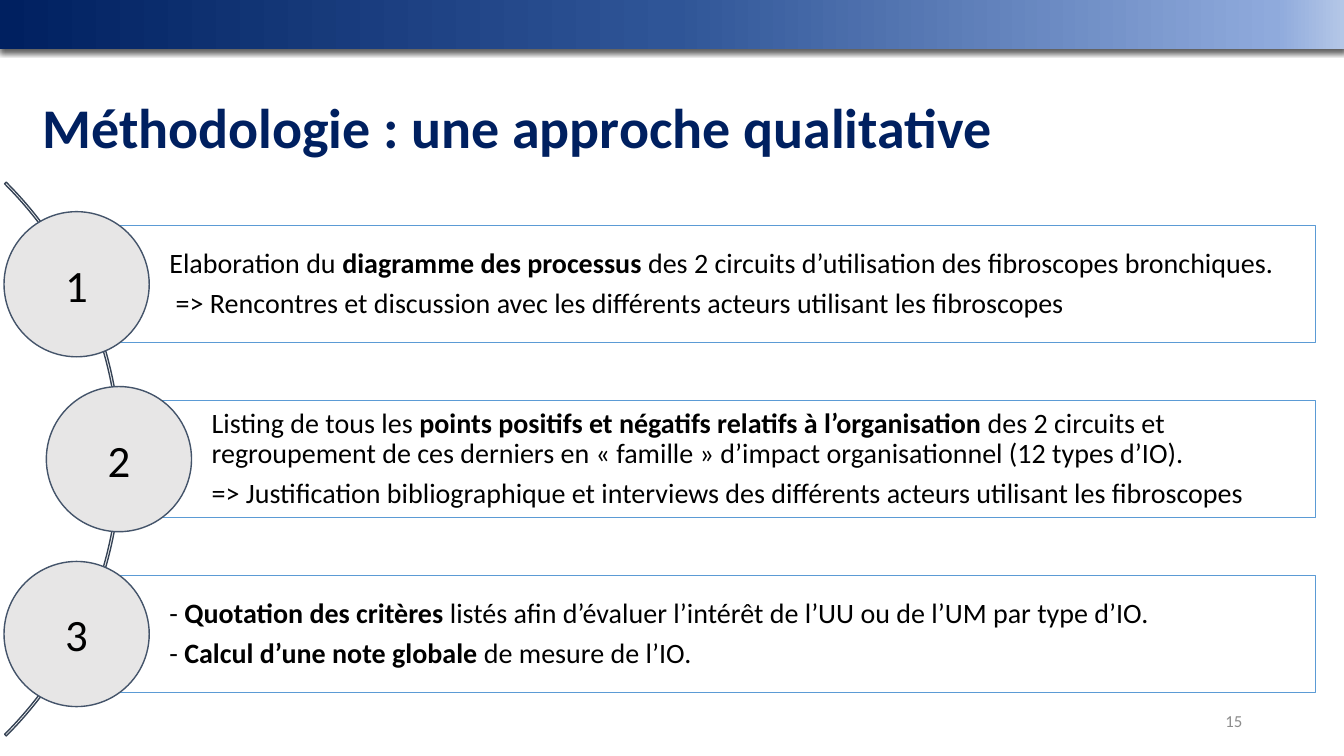
from collections import namedtuple

from lxml import etree
from pptx import Presentation
from pptx.dml.color import RGBColor as Rgb
from pptx.enum.shapes import MSO_SHAPE as Kind
from pptx.enum.text import MSO_ANCHOR as Anchor, MSO_AUTO_SIZE as Auto, PP_ALIGN as Align
from pptx.util import Inches, Pt

Theme = namedtuple("Theme", "font navy ink grey disc rim edge arc white ramp title number body small")
theme = Theme(
    font="Calibri", navy="002060", ink="000000", grey="8C8C8C", disc="E7E6E6",
    rim="44546A", edge="5B9BD5", arc="364355", white="FFFFFF",
    ramp=[(0, "002060"), (50, "2F5597"), (95, "8FAADC"), (100, "B4C7E7")],
    title=40, number=32, body=20, small=12,
)


def add_run(para, text, size, color, bold=False):
    run = para.add_run()
    run.text = text
    font = run.font
    font.name, font.size, font.bold = theme.font, Pt(size), bold
    font.color.rgb = Rgb.from_string(color)


def add_form(shapes, kind, box, fill, line):
    """Add a preset shape without shadow; fill or line may be None."""
    form = shapes.add_shape(kind, *map(Inches, box))
    form.shadow.inherit = False
    if fill:
        form.fill.solid()
        form.fill.fore_color.rgb = Rgb.from_string(fill)
    else:
        form.fill.background()
    if line:
        form.line.color.rgb = Rgb.from_string(line)
        form.line.width = Pt(1)
    else:
        form.line.fill.background()
    return form


prs = Presentation()
prs.slide_width, prs.slide_height = Inches(13.33), Inches(7.5)
slide = prs.slides.add_slide(prs.slide_layouts[5])

# Title
title = slide.shapes.title
title.left, title.top, title.width, title.height = map(Inches, (0.32, 0.57, 12.42, 1.45))
frame = title.text_frame
frame.word_wrap, frame.auto_size = True, Auto.NONE
frame.vertical_anchor = Anchor.MIDDLE
para = frame.paragraphs[0]
para.alignment, para.line_spacing = Align.LEFT, 0.9
add_run(para, "Méthodologie : une approche qualitative", theme.title, theme.navy, True)

# Page number
page = slide.shapes.add_textbox(*map(Inches, (9.42, 6.95, 3, 0.4)))
page.text_frame.word_wrap = True
page.text_frame.vertical_anchor = Anchor.MIDDLE
para = page.text_frame.paragraphs[0]
para.alignment = Align.RIGHT
add_run(para, "15", theme.small, theme.grey)

# Gradient banner with a soft shadow below
banner = add_form(slide.shapes, Kind.RECTANGLE, (0, 0, 13.33, 0.49), theme.navy, None)
space = 'xmlns:a="http://schemas.openxmlformats.org/drawingml/2006/main"'
stops = "".join(
    f'<a:gs pos="{pos * 1000}"><a:srgbClr val="{color}"/></a:gs>' for pos, color in theme.ramp
)
props = banner.element.spPr
props.replace(props.find("{*}solidFill"), etree.fromstring(
    f'<a:gradFill {space} rotWithShape="1"><a:gsLst>{stops}</a:gsLst>'
    '<a:lin ang="0" scaled="0"/></a:gradFill>'))
props.replace(props.find("{*}effectLst"), etree.fromstring(
    f'<a:effectLst {space}><a:outerShdw blurRad="{Pt(4.5)}" dist="{Pt(1.5)}" dir="5400000" '
    'algn="ctr" rotWithShape="0"><a:srgbClr val="000000"><a:alpha val="63000"/></a:srgbClr>'
    '</a:outerShdw></a:effectLst>'))

# Steps along the arc: disc left, then paragraphs of (text, bold) runs
steps = [
    (0.04, [
        [("Elaboration du ", False), ("diagramme des processus ", True),
         ("des 2 circuits d’utilisation des fibroscopes bronchiques.", False)],
        [(" => Rencontres et discussion avec les différents acteurs utilisant les fibroscopes", False)],
    ]),
    (0.46, [
        [("Listing de tous les ", False),
         ("points positifs et négatifs relatifs à l’organisation ", True),
         ("des 2 circuits et regroupement de ces derniers en « famille » d’impact "
          "organisationnel (12 types d’IO).", False)],
        [("=> Justification bibliographique et interviews des différents acteurs "
          "utilisant les fibroscopes", False)],
    ]),
    (0.04, [
        [("- ", False), ("Quotation des critères ", True),
         ("listés afin d’évaluer l’intérêt de l’UU ou de l’UM par type d’IO.", False)],
        [("- ", False), ("Calcul d’une note globale ", True), ("de mesure de l’IO.", False)],
    ]),
]
size, high, right, first, pitch = 1.44, 1.16, 13.05, 2.82, 1.735

group = slide.shapes.add_group_shape().shapes
arc = add_form(group, Kind.BLOCK_ARC, (-6.57, 0.67, 7.77, 7.77), None, theme.arc)
for i, value in enumerate((189, 27, 0.003)):
    arc.adjustments[i] = value

for i, (left, paras) in enumerate(steps):
    mid_x, mid_y = left + size / 2, first + i * pitch
    bar = add_form(group, Kind.RECTANGLE, (mid_x, mid_y - high / 2, right - mid_x, high),
                   theme.white, theme.edge)
    frame = bar.text_frame
    frame.word_wrap, frame.vertical_anchor = True, Anchor.MIDDLE
    frame.margin_left = Inches(0.92)
    frame.margin_top = frame.margin_right = frame.margin_bottom = Inches(0.06)
    for j, runs in enumerate(paras):
        para = frame.add_paragraph() if j else frame.paragraphs[0]
        para.alignment, para.line_spacing = Align.LEFT, 0.9
        para.space_before = Pt(7 if j else 0)
        for text, bold in runs:
            add_run(para, text, theme.body, theme.ink, bold)

    disc = add_form(group, Kind.OVAL, (left, mid_y - size / 2, size, size), theme.disc, theme.rim)
    disc.text_frame.vertical_anchor = Anchor.MIDDLE
    para = disc.text_frame.paragraphs[0]
    para.alignment = Align.CENTER
    add_run(para, str(i + 1), theme.number, theme.ink)

prs.save("out.pptx")
